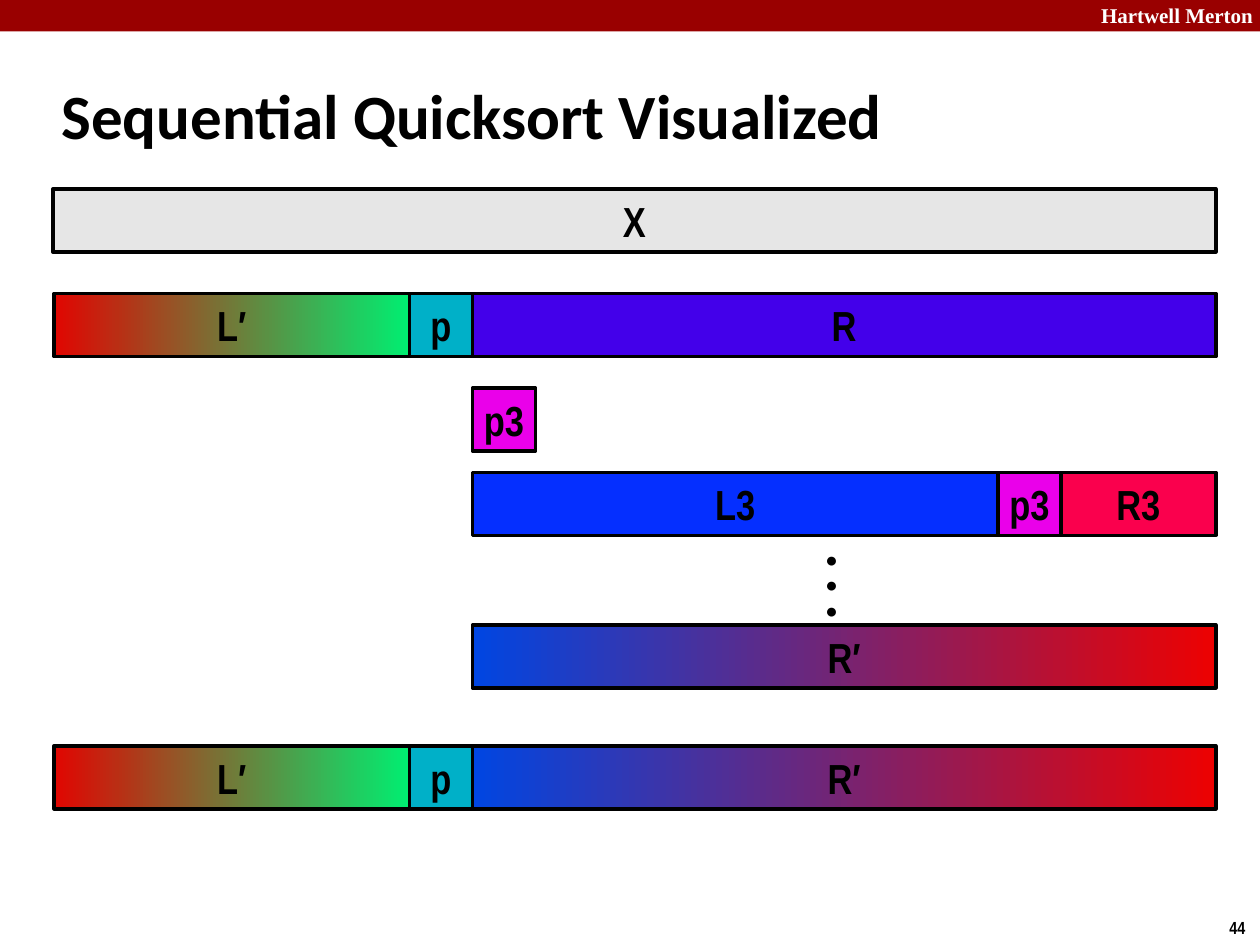
from dataclasses import dataclass

import pptx
import pptx.dml.color
import pptx.enum.shapes
import pptx.enum.text
import pptx.util

Inches = pptx.util.Inches
Align = pptx.enum.text.PP_ALIGN
Anchor = pptx.enum.text.MSO_ANCHOR

COLORS = {
    "black": "000000", "white": "FFFFFF", "banner": "990000",
    "input": "E6E6E6", "pivot": "00B0C8", "right": "4300EA",
    "pivot3": "EA00EA", "left3": "052FFF", "right3": "FA004D",
    "red": "E10601", "green": "00EE71", "blue": "0046E2", "scarlet": "ED0101",
}

# Column edges and the bar height, in inches
START, PIVOT, RIGHT, PIVOT3, END = 0.43, 3.25, 3.75, 7.92, 9.65
BAR = 0.5
RIGHT3 = PIVOT3 + BAR
SPLIT, PICK3, SPLIT3, SORTED_RIGHT, RESULT = 2.33, 3.08, 3.75, 4.96, 5.92


@dataclass
class Segment:
    """A stretch of the array; two fill names make a gradient."""
    text: str
    left: float
    right: float
    top: float
    fill: tuple[str, ...]


@dataclass
class Label:
    lines: tuple[str, ...]
    box: tuple[float, float, float, float]
    font: str
    size: int
    color: str = "black"
    anchor: Anchor = Anchor.TOP


def sorted_left(top: float) -> Segment:
    return Segment("L′", START, PIVOT, top, ("red", "green"))


def pivot(top: float) -> Segment:
    return Segment("p", PIVOT, RIGHT, top, ("pivot",))


def sorted_right(top: float) -> Segment:
    return Segment("R′", RIGHT, END, top, ("blue", "scarlet"))


SEGMENTS = [
    Segment("X", 0.42, END, 1.5, ("input",)),
    pivot(SPLIT),
    Segment("R", RIGHT, END, SPLIT, ("right",)),
    Segment("p3", RIGHT, RIGHT + BAR, PICK3, ("pivot3",)),
    Segment("L3", RIGHT, PIVOT3, SPLIT3, ("left3",)),
    Segment("R3", RIGHT3, END, SPLIT3, ("right3",)),
    Segment("p3", PIVOT3, RIGHT3, SPLIT3, ("pivot3",)),
    sorted_left(SPLIT),
    sorted_right(SORTED_RIGHT),
    pivot(RESULT),
    sorted_left(RESULT),
    sorted_right(RESULT),
]

LABELS = [
    Label(("Hartwell Merton",), (8.64, -0.03, 1.43, 0.3),
          "Times New Roman", 12, "white"),
    Label(("44",), (9.66, 7.23, 0.34, 0.27), "Arial Narrow", 10),
    Label(("Sequential Quicksort Visualized",), (0.39, 0.49, 8.3, 0.83),
          "Calibri", 36, anchor=Anchor.MIDDLE),
    Label(("•",) * 3, (6.46, 4.29, 0.28, 0.71), "Calibri", 12),
]


def rgb(name: str) -> pptx.dml.color.RGBColor:
    return pptx.dml.color.RGBColor.from_string(COLORS[name])


def write(tf, lines: tuple[str, ...], font: str, size: int, color: str,
          align: Align, anchor: Anchor) -> None:
    for name, value in {"word_wrap": False, "vertical_anchor": anchor}.items():
        setattr(tf, name, value)
    font_format = {"name": font, "size": pptx.util.Pt(size), "bold": True}
    for i, line in enumerate(lines):
        p = tf.add_paragraph() if i else tf.paragraphs[0]
        p.alignment = align
        r = p.add_run()
        r.text = line
        for name, value in font_format.items():
            setattr(r.font, name, value)
        r.font.color.rgb = rgb(color)


def add_rect(s, left: float, top: float, width: float, height: float,
             fill: tuple[str, ...]):
    sp = s.shapes.add_shape(pptx.enum.shapes.MSO_SHAPE.RECTANGLE,
                            *map(Inches, (left, top, width, height)))
    sp.shadow.inherit = False
    if len(fill) == 1:
        sp.fill.solid()
        sp.fill.fore_color.rgb = rgb(fill[0])
    else:
        sp.fill.gradient()
        sp.fill.gradient_angle = 0
        for stop, name, position in zip(sp.fill.gradient_stops, fill, (0, 1)):
            stop.color.rgb = rgb(name)
            stop.position = position
    return sp


def add_segment(s, seg: Segment) -> None:
    sp = add_rect(s, seg.left, seg.top, seg.right - seg.left, BAR, seg.fill)
    sp.line.color.rgb = rgb("black")
    sp.line.width = pptx.util.Pt(2)
    write(sp.text_frame, (seg.text,), "Arial Narrow", 24, "black",
          Align.CENTER, Anchor.MIDDLE)


def add_label(s, label: Label) -> None:
    sp = s.shapes.add_textbox(*map(Inches, label.box))
    write(sp.text_frame, label.lines, label.font, label.size, label.color,
          Align.LEFT, label.anchor)


def main() -> None:
    prs = pptx.Presentation()
    prs.slide_width, prs.slide_height = Inches(10), Inches(7.5)
    s = prs.slides.add_slide(prs.slide_layouts[6])
    banner = add_rect(s, 0, 0, 10, 0.25, ("banner",))
    banner.line.fill.background()
    for seg in SEGMENTS:
        add_segment(s, seg)
    for label in LABELS:
        add_label(s, label)
    prs.save("out.pptx")


if __name__ == "__main__":
    main()
